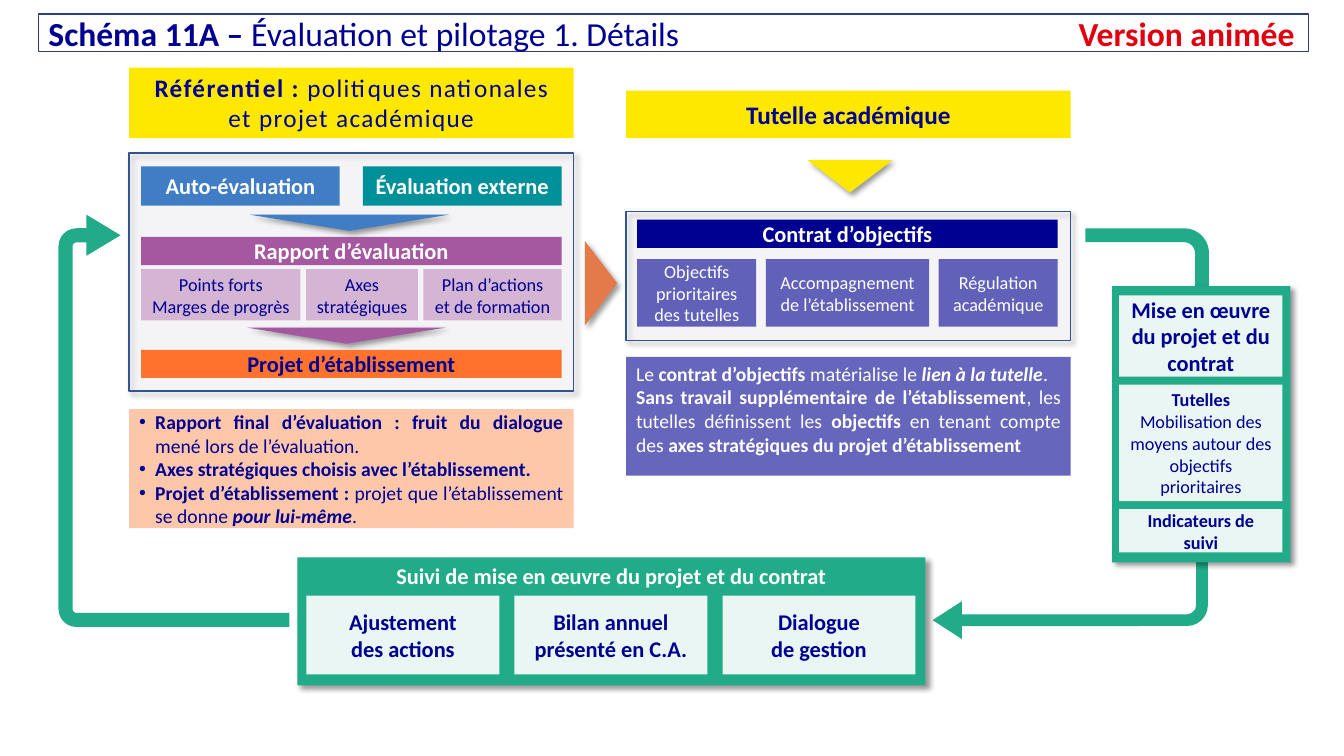
"""Build the slide « Schéma 11A – Évaluation et pilotage 1. Détails »."""
import pptx
import pptx.util
import pptx.dml.color
import pptx.enum.shapes
import pptx.enum.text
import pptx.oxml
import pptx.oxml.ns

RGB = pptx.dml.color.RGBColor
KIND = pptx.enum.shapes.MSO_SHAPE
ALIGN = pptx.enum.text.PP_ALIGN
ANCHOR = pptx.enum.text.MSO_ANCHOR
Inches, Pt = pptx.util.Inches, pptx.util.Pt
qn = pptx.oxml.ns.qn

NAVY, WHITE, RED = RGB(0, 0, 0x91), RGB(255, 255, 255), RGB(0xE1, 0, 0x0F)
YELLOW, GREEN, TEAL = RGB(0xFF, 0xE8, 0), RGB(0x21, 0xAB, 0x88), RGB(0, 0x90, 0x99)
BLUE, PURPLE, ORANGE = RGB(0x41, 0x7D, 0xC4), RGB(0xA5, 0x58, 0xA0), RGB(0xFF, 0x73, 0x2C)
RUST, PALE = RGB(0xE4, 0x79, 0x4A), RGB(0xEF, 0xEF, 0xFF)
EDGE, TITLE_EDGE = RGB(0x32, 0x54, 0x91), RGB(0x2F, 0x40, 0x77)

TITLE = [[("Schéma 11A – ", "b"), ("Évaluation et pilotage 1. Détails\t", ""),
          ("Version animée", "br")]]
REFERENCE = [[("Référentiel :", "b"), (" politiques nationales", "")],
             [("et projet académique", "")]]
REPORT_NOTES = [
    [("Rapport final d’évaluation : fruit du dialogue ", "b"),
     ("mené lors de l’évaluation.", "")],
    [("Axes stratégiques choisis avec l’établissement.", "b")],
    [("Projet d’établissement : ", "b"), ("projet que l’établissement se donne ", ""),
     ("pour lui-même", "bi"), (".", "")]]
CONTRACT_NOTES = [
    [("Le ", ""), ("contrat d’objectifs ", "b"), ("matérialise le ", ""),
     ("lien à la tutelle", "bi"), (".", "")],
    [("Sans travail supplémentaire de l’établissement", "b"),
     (", les tutelles définissent les ", ""), ("objectifs ", "b"),
     ("en tenant compte des ", ""), ("axes stratégiques du projet d’établissement", "b")]]
EVALUATIONS = [("Auto-évaluation", BLUE), ("Évaluation externe", TEAL)]
REPORT_PARTS = [("Points forts\nMarges de progrès", 1.58), ("Axes stratégiques", 1.11),
                ("Plan d’actions et de formation", 1.37)]
CONTRACT_PARTS = [("Objectifs prioritaires\ndes tutelles", 1.18),
                  ("Accompagnement de l’établissement", 1.62),
                  ("Régulation académique", 1.18)]
IMPLEMENTATION = [
    ([[("Mise en œuvre du projet et du contrat", "b")]], 16, 0.81),
    ([[("Tutelles", "b")],
      [("Mobilisation des moyens autour des objectifs prioritaires", "")]], 13, 1.16),
    ([[("Indicateurs de suivi", "b")]], 13, 0.43)]
FOLLOW_UP = ["Ajustement\ndes actions", "Bilan annuel\nprésenté en C.A.",
             "Dialogue\nde gestion"]

LEFT, MID, RIGHT, COL_W = 1.28, 6.21, 11.03, 4.41
PAD, BAR_W, BAR_H = 0.12, 4.17, 0.28

prs = pptx.Presentation()
prs.slide_width, prs.slide_height = Inches(13.33), Inches(7.5)
slide = prs.slides.add_slide(prs.slide_layouts[1])


def split(start, total, shares, gap):
    """Return (position, size) pairs that share a length with equal gaps."""
    unit = (total - gap * (len(shares) - 1)) / sum(shares)
    pairs = []
    for share in shares:
        pairs.append((start, share * unit))
        start += share * unit + gap
    return pairs


def write(sp, text, size=16, color=WHITE, style="b", align=ALIGN.CENTER,
          anchor=ANCHOR.MIDDLE, inset=0.1, spacing=0):
    """Fill a shape with a string or with paragraphs of (text, style) runs."""
    if isinstance(text, str):
        text = [[(line, style)] for line in text.split("\n")]
    tf = sp.text_frame
    tf.word_wrap = True
    tf.auto_size = pptx.enum.text.MSO_AUTO_SIZE.NONE
    tf.vertical_anchor = anchor
    tf.margin_left = tf.margin_right = Inches(inset)
    tf.margin_top = tf.margin_bottom = Inches(0.05)
    for i, runs in enumerate(text):
        p = tf.add_paragraph() if i else tf.paragraphs[0]
        p.alignment = align
        p.space_before = Pt(0)
        for words, flags in runs:
            r = p.add_run()
            r.text = words
            r.font.name, r.font.size = "Calibri", Pt(size)
            r.font.bold, r.font.italic = "b" in flags, "i" in flags
            r.font.color.rgb = RED if "r" in flags else color
            if spacing:
                r._r.get_or_add_rPr().set("spc", str(spacing * 100))


def dress(sp, box, fill=None, alpha=100, edge=None, shadow=False):
    """Place a shape and set its fill, outline and shadow."""
    sp.left, sp.top, sp.width, sp.height = map(Inches, box)
    spPr = sp._element.spPr
    if fill is None:
        sp.fill.background()
    else:
        sp.fill.solid()
        sp.fill.fore_color.rgb = fill
        if alpha < 100:
            clr = spPr.find(qn("a:solidFill")).find(qn("a:srgbClr"))
            clr.append(pptx.oxml.parse_xml(
                f'<a:alpha {pptx.oxml.ns.nsdecls("a")} val="{alpha * 1000}"/>'))
    if edge is None:
        sp.line.fill.background()
    else:
        sp.line.color.rgb, sp.line.width = edge, Pt(1)
    sp.shadow.inherit = False
    if shadow:
        spPr.find(qn("a:effectLst")).append(pptx.oxml.parse_xml(
            f'<a:outerShdw {pptx.oxml.ns.nsdecls("a")} blurRad="50800" dist="38100" '
            'dir="2700000" algn="tl" rotWithShape="0"><a:srgbClr val="000000">'
            '<a:alpha val="40000"/></a:srgbClr></a:outerShdw>'))
    return sp


def shape(box, fill, kind=KIND.RECTANGLE, turn=0, adjust=(), **look):
    """Add a preset shape."""
    sp = dress(slide.shapes.add_shape(kind, *map(Inches, box)), box, fill, **look)
    sp.rotation = turn
    for i, value in enumerate(adjust):
        sp.adjustments[i] = value
    return sp


def label(box, fill, text, alpha=100, shadow=False, **fmt):
    """Add a rectangle with text."""
    write(shape(box, fill, alpha=alpha, shadow=shadow), text, **fmt)


def main():
    """Draw every part of the slide and save it."""
    title, body = slide.placeholders
    dress(title, (0.38, 0.14, 12.6, 0.37), edge=TITLE_EDGE)
    write(title, TITLE, size=24, color=NAVY, align=ALIGN.LEFT)
    title.text_frame.paragraphs[0]._p.get_or_add_pPr().append(pptx.oxml.parse_xml(
        f'<a:tabLst {pptx.oxml.ns.nsdecls("a")}>'
        f'<a:tab pos="{Inches(12.36)}" algn="r"/></a:tabLst>'))
    dress(body, (LEFT, 4.06, COL_W, 1.18), ORANGE, alpha=40)
    write(body, REPORT_NOTES, size=14, color=NAVY, align=ALIGN.JUSTIFY)
    for p in body.text_frame.paragraphs:
        pPr = p._p.get_or_add_pPr()
        pPr.set("marL", str(Inches(0.16)))
        pPr.set("indent", str(-Inches(0.16)))

    bend = (0.1, 0.162, 0.25, 0.178)
    shape((9.25, 5.18, 2.73, 1.16), GREEN, KIND.BENT_ARROW, 180, bend)
    shape((10.35, 2.68, 2.21, 1.38), GREEN, KIND.BENT_ARROW, 90, bend)
    shape((-0.32, 3.03, 4.09, 2.29), GREEN, KIND.U_TURN_ARROW, 270,
          (0.061, 0.089, 0.148, 0.078, 0.269))
    for box in ((LEFT, 1.52, COL_W, 2.36), (MID, 2.1, COL_W, 1.28)):
        shape(box, PALE, alpha=10, edge=EDGE, shadow=True)
    for box, fill, turn in (((8.01, 1.59, 0.84, 0.32), YELLOW, 180),
                            ((2.48, 2.13, 1.97, 0.16), BLUE, 180),
                            ((2.45, 3.25, 1.97, 0.16), PURPLE, 180),
                            ((5.54, 2.65, 0.84, 0.32), RUST, 90)):
        shape(box, fill, KIND.ISOSCELES_TRIANGLE, turn, shadow=True)

    label((LEFT, 0.67, COL_W, 0.7), YELLOW, REFERENCE, size=18, color=NAVY, spacing=1)
    label((MID, 0.9, COL_W, 0.47), YELLOW, "Tutelle académique", size=18, color=NAVY)
    left, mid = LEFT + PAD, MID + PAD - 0.01
    for (x, w), (text, fill) in zip(split(left, BAR_W, (1, 1), 0.23), EVALUATIONS):
        label((x, 1.65, w, 0.39), fill, text)
    label((left, 2.35, BAR_W, BAR_H), PURPLE, "Rapport d’évaluation")
    label((left, 3.47, BAR_W, BAR_H), ORANGE, "Projet d’établissement", color=NAVY)
    label((mid, 2.18, BAR_W, BAR_H), NAVY, "Contrat d’objectifs")
    for parts, x0, y, h, gap, fill, alpha, color in (
            (REPORT_PARTS, left, 2.67, 0.51, 0.055, PURPLE, 40, NAVY),
            (CONTRACT_PARTS, mid, 2.57, 0.67, 0.095, NAVY, 60, WHITE)):
        spans = split(x0, BAR_W, [share for _, share in parts], gap)
        for (x, w), (text, _) in zip(spans, parts):
            label((x, y, w, h), fill, text, alpha=alpha, size=13, color=color, style="")
    label((MID, 3.54, COL_W, 1.18), NAVY, CONTRACT_NOTES, alpha=60, size=14,
          align=ALIGN.JUSTIFY, anchor=ANCHOR.TOP)

    shape((RIGHT, 2.84, 1.77, 2.74), GREEN, shadow=True)
    rows = split(2.93, 2.55, [share for _, _, share in IMPLEMENTATION], 0.08)
    for (y, h), (text, size, _) in zip(rows, IMPLEMENTATION):
        label((RIGHT + 0.07, y, 1.62, h), WHITE, text, alpha=90, size=size, color=NAVY)
    label((2.95, 5.53, 6.23, 1.27), GREEN, "Suivi de mise en œuvre du projet et du contrat",
          shadow=True, anchor=ANCHOR.TOP, inset=0.04)
    for (x, w), text in zip(split(3.04, 6.04, (1, 1, 1), 0.15), FOLLOW_UP):
        label((x, 5.91, w, 0.78), WHITE, text, alpha=90, color=NAVY)
    prs.save("out.pptx")


if __name__ == "__main__":
    main()
